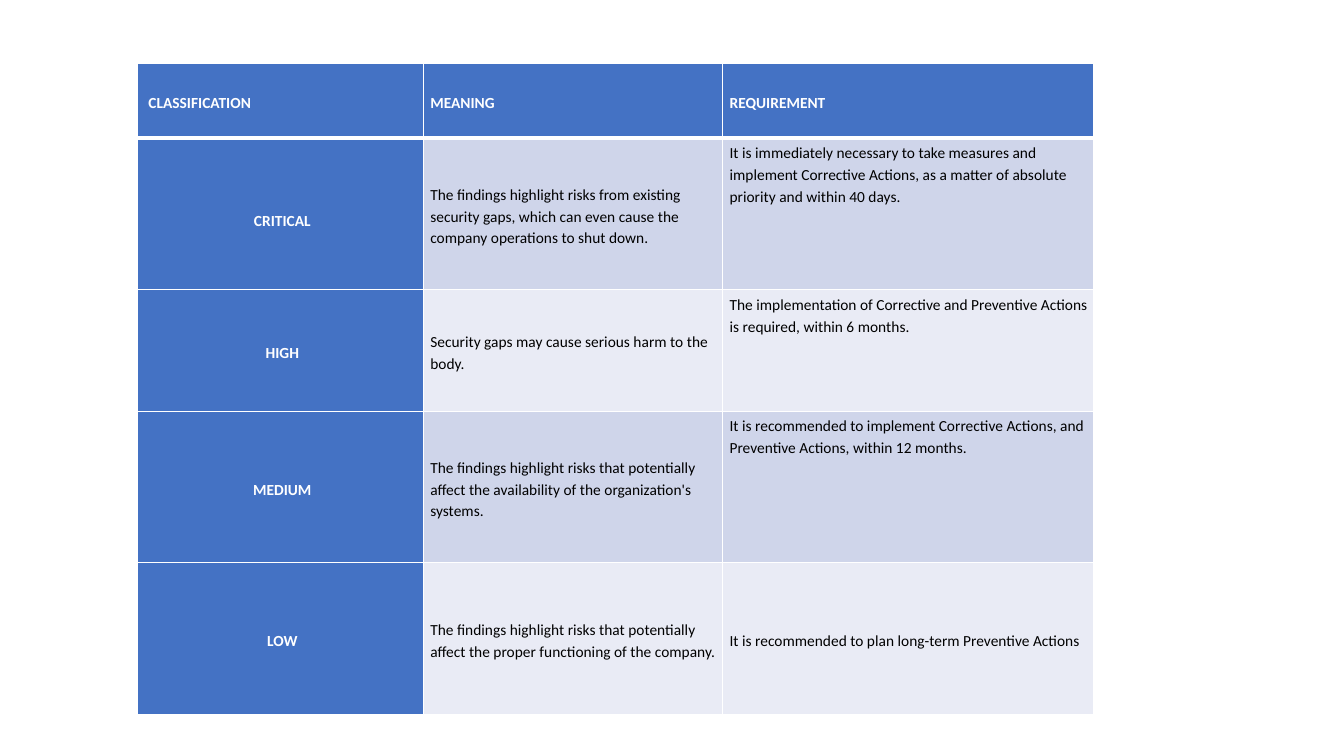
"""Build a slide with a table of risk classifications."""
from dataclasses import dataclass

import pptx
import pptx.dml.color
import pptx.enum.text
import pptx.oxml
import pptx.oxml.ns
import pptx.table
import pptx.util

Pt = pptx.util.Pt
RGBColor = pptx.dml.color.RGBColor
Align = pptx.enum.text.PP_ALIGN
Anchor = pptx.enum.text.MSO_ANCHOR

WHITE = RGBColor(0xFF, 0xFF, 0xFF)
BLACK = RGBColor(0x00, 0x00, 0x00)
BLUE = RGBColor(0x44, 0x72, 0xC4)
BANDS = (RGBColor(0xCF, 0xD5, 0xEA), RGBColor(0xE9, 0xEB, 0xF5))

TABLE_LEFT, TABLE_TOP = 98, 45
COLUMN_WIDTHS = (204.4, 213.8, 264.9)
HEADER_HEIGHT = 53.8
HEADINGS = ("CLASSIFICATION", "MEANING", "REQUIREMENT")


@dataclass(frozen=True)
class RiskLevel:
    name: str
    meaning: str
    requirement: str
    height: float = 108.2
    name_inset: float = 2
    requirement_anchor: Anchor = Anchor.TOP


@dataclass(frozen=True)
class CellStyle:
    fill: RGBColor
    color: RGBColor = BLACK
    bold: bool = False
    align: Align = Align.LEFT
    anchor: Anchor = Anchor.MIDDLE
    inset_left: float = 5
    inset_top: float = 2
    bottom_border: float = 1


RISK_LEVELS = (
    RiskLevel(
        "CRITICAL",
        "The findings highlight risks from existing security gaps, "
        "which can even cause the company operations to shut down.",
        "It is immediately necessary to take measures and implement Corrective "
        "Actions, as a matter of absolute priority and within 40 days.",
        name_inset=8,
    ),
    RiskLevel(
        "HIGH",
        "Security gaps may cause serious harm to the body.",
        "The implementation of Corrective and Preventive Actions is required, "
        "within 6 months.",
        height=86.8,
    ),
    RiskLevel(
        "MEDIUM",
        "The findings highlight risks that potentially affect the availability "
        "of the organization's systems.",
        "It is recommended to implement Corrective Actions, and Preventive "
        "Actions, within 12 months.",
    ),
    RiskLevel(
        "LOW",
        "The findings highlight risks that potentially affect the proper "
        "functioning of the company.",
        "It is recommended to plan long-term Preventive Actions",
        requirement_anchor=Anchor.MIDDLE,
    ),
)


def add_border(cell: pptx.table._Cell, side: str, width: float) -> None:
    namespace = pptx.oxml.ns.nsdecls("a")
    border = pptx.oxml.parse_xml(
        f'<a:ln{side} {namespace} w="{Pt(width)}"><a:solidFill>'
        f'<a:srgbClr val="{WHITE}"/></a:solidFill></a:ln{side}>'
    )
    cell._tc.get_or_add_tcPr().append(border)


def write_cell(cell: pptx.table._Cell, text: str, style: CellStyle) -> None:
    for side in "LRT":
        add_border(cell, side, 1)
    add_border(cell, "B", style.bottom_border)
    cell.fill.solid()
    cell.fill.fore_color.rgb = style.fill
    cell.margin_left = Pt(style.inset_left)
    cell.margin_top = Pt(style.inset_top)
    cell.margin_right = Pt(2)
    cell.margin_bottom = Pt(0)
    cell.vertical_anchor = style.anchor
    cell.text_frame.text = text
    para = cell.text_frame.paragraphs[0]
    para.alignment = style.align
    para.line_spacing = 1.15
    font = para.runs[0].font
    font.name = "Calibri"
    font.size = Pt(11)
    font.bold = style.bold
    font.color.rgb = style.color


def write_header(table: pptx.table.Table) -> None:
    table.rows[0].height = Pt(HEADER_HEIGHT)
    for column, heading in enumerate(HEADINGS):
        style = CellStyle(
            BLUE, WHITE, True, Align.JUSTIFY,
            inset_left=8 if column == 0 else 5, bottom_border=3,
        )
        write_cell(table.cell(0, column), heading, style)


def write_level(table: pptx.table.Table, row: int, level: RiskLevel) -> None:
    table.rows[row].height = Pt(level.height)
    band = BANDS[(row - 1) % 2]
    name_style = CellStyle(BLUE, WHITE, True, Align.CENTER, inset_top=level.name_inset)
    write_cell(table.cell(row, 0), level.name, name_style)
    write_cell(table.cell(row, 1), level.meaning, CellStyle(band))
    write_cell(
        table.cell(row, 2), level.requirement,
        CellStyle(band, anchor=level.requirement_anchor),
    )


def main() -> None:
    deck = pptx.Presentation()
    deck.slide_width, deck.slide_height = Pt(960), Pt(540)
    page = deck.slides.add_slide(deck.slide_layouts[6])
    height = HEADER_HEIGHT + sum(level.height for level in RISK_LEVELS)
    table = page.shapes.add_table(
        len(RISK_LEVELS) + 1, len(HEADINGS),
        Pt(TABLE_LEFT), Pt(TABLE_TOP), Pt(sum(COLUMN_WIDTHS)), Pt(height),
    ).table
    for column, width in zip(table.columns, COLUMN_WIDTHS):
        column.width = Pt(width)
    write_header(table)
    for row, level in enumerate(RISK_LEVELS, start=1):
        write_level(table, row, level)
    deck.save("out.pptx")


if __name__ == "__main__":
    main()
